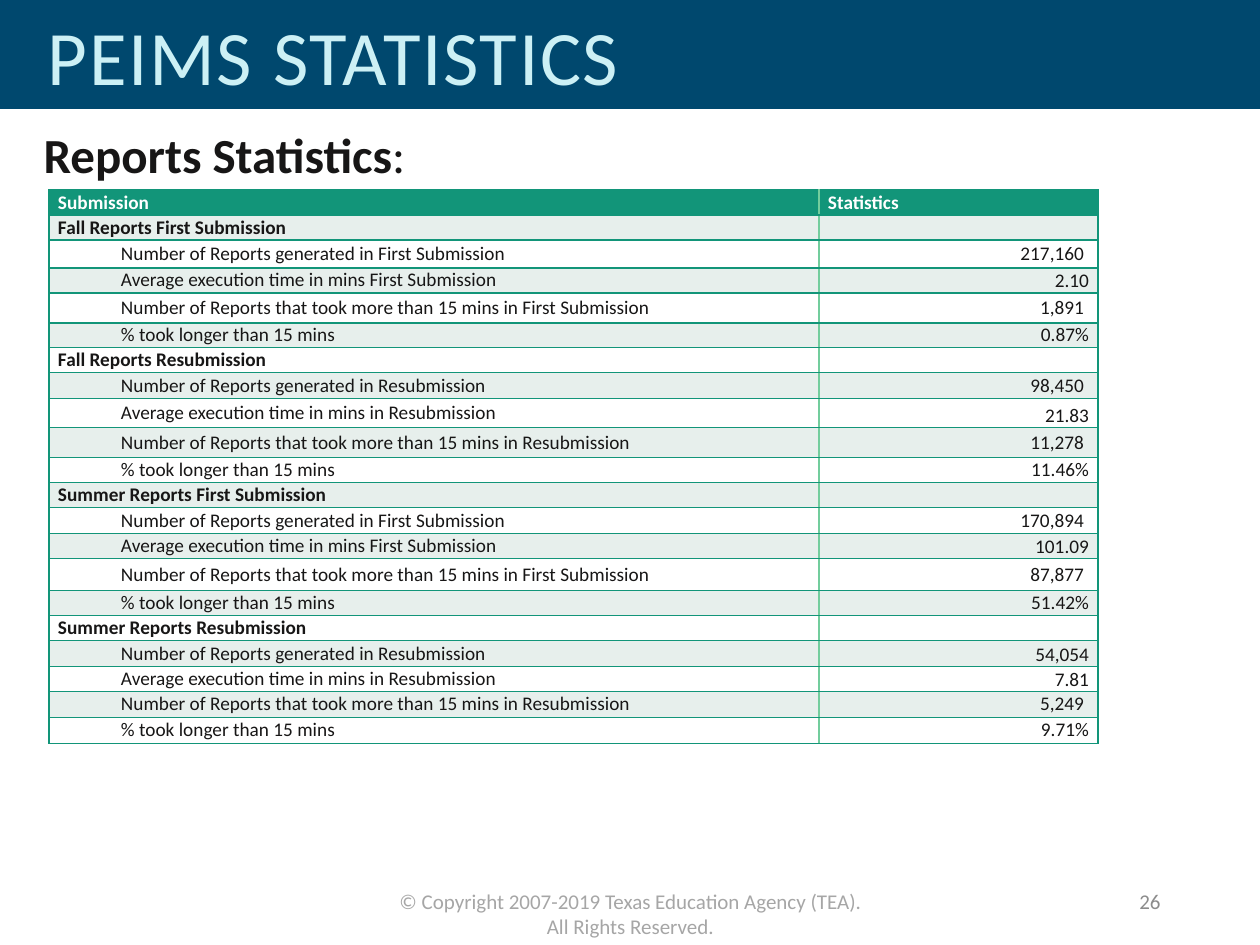
from lxml.etree import SubElement
from pptx import Presentation
from pptx.dml.color import RGBColor
from pptx.enum.shapes import MSO_SHAPE
from pptx.enum.text import MSO_ANCHOR, MSO_AUTO_SIZE, PP_ALIGN
from pptx.oxml import parse_xml
from pptx.oxml.ns import nsdecls, qn
from pptx.util import Emu, Pt

DPI = 126
INK, GREEN, MINT = "171616", "129579", "73CD9D"
BANDS = ["FFFFFF", "E7EFEC"]
COLUMNS = [770, 279]

GROUPS = [
    ("Fall Reports", "First Submission", 25, [
        ("217,160", 28, True), ("2.10", 25, False),
        ("1,891", 30, True), ("0.87%", 25, False)]),
    ("Fall Reports", "Resubmission", 25, [
        ("98,450", 26, True), ("21.83", 29, False),
        ("11,278", 30, True), ("11.46%", 25, False)]),
    ("Summer Reports", "First Submission", 25, [
        ("170,894", 26, True), ("101.09", 25, False),
        ("87,877", 32, True), ("51.42%", 25, False)]),
    ("Summer Reports", "Resubmission", 25, [
        ("54,054", 26, False), ("7.81", 25, False),
        ("5,249", 26, True), ("9.71%", 26, False)]),
]


def px(n):
    return Emu(round(n * 914400 / DPI))


def rgb(value):
    return RGBColor.from_string(value)


def place(sp, box):
    sp.left, sp.top, sp.width, sp.height = map(px, box)


def add_text(p, text, size=11, color=INK, bold=False, align=PP_ALIGN.LEFT, spacing=None):
    p.alignment = align
    r = p.add_run()
    r.text = text
    r.font.name = "Calibri"
    r.font.size = Pt(size)
    r.font.bold = bold
    r.font.color.rgb = rgb(color)
    if spacing:
        r._r.get_or_add_rPr().set("spc", str(spacing))


def add_banner(s, box):
    sp = s.shapes.add_shape(MSO_SHAPE.RECTANGLE, *map(px, box))
    sp.shadow.inherit = False
    sp.fill.solid()
    sp.fill.fore_color.rgb = rgb("00486E")
    sp.line.fill.background()
    s.shapes._spTree.insert(2, sp._element)


def add_title(s, box):
    sp = s.shapes.title
    place(sp, box)
    tf = sp.text_frame
    tf.auto_size = MSO_AUTO_SIZE.NONE
    tf.vertical_anchor = MSO_ANCHOR.MIDDLE
    p = tf.paragraphs[0]
    p.line_spacing = 0.9
    add_text(p, "PEIMS STATISTICS", size=44, color="CCF0F5", spacing=100)


def add_body(s, box):
    sp = s.placeholders[1]
    place(sp, box)
    tf = sp.text_frame
    tf.auto_size = MSO_AUTO_SIZE.NONE
    p = tf.paragraphs[0]
    p.line_spacing = 0.9
    p.space_before = Pt(0)
    pPr = p._p.get_or_add_pPr()
    pPr.set("marL", "0")
    pPr.set("indent", "0")
    SubElement(pPr, qn("a:buNone"))
    add_text(p, "Reports Statistics", size=28, bold=True)
    add_text(p, ":", size=28)


def add_note(s, box, text, anchor=MSO_ANCHOR.TOP, **fmt):
    tf = s.shapes.add_textbox(*map(px, box)).text_frame
    tf.word_wrap = True
    tf.vertical_anchor = anchor
    add_text(tf.paragraphs[0], text, size=12, **fmt)


def add_borders(cell, **colors):
    tcPr = cell._tc.get_or_add_tcPr()
    for i, side in enumerate("LRTB"):
        tcPr.insert(i, parse_xml(
            f'<a:ln{side} {nsdecls("a")} w="12700"><a:solidFill>'
            f'<a:srgbClr val="{colors.get(side, GREEN)}"/></a:solidFill></a:ln{side}>'))


def fill_cell(cell, text, fill, anchor=MSO_ANCHOR.MIDDLE, indent=0, right=9, **fmt):
    cell.margin_left, cell.margin_right = px(9), px(right)
    cell.margin_top = cell.margin_bottom = 0
    cell.vertical_anchor = anchor
    cell.fill.solid()
    cell.fill.fore_color.rgb = rgb(fill)
    p = cell.text_frame.paragraphs[0]
    if indent:
        p.level = 1
        p._p.get_or_add_pPr().set("marL", str(px(indent)))
    if text:
        add_text(p, text, **fmt)
    else:
        SubElement(p._p, qn("a:endParaRPr"), sz="1100")


def table_rows():
    header = dict(color="FFFFFF", bold=True)
    yield 25, ("Submission", header), ("Statistics", header)
    for season, period, height, stats in GROUPS:
        yield height, (f"{season} {period}", dict(bold=True)), ("", {})
        joint = "" if period == "First Submission" else "in "
        labels = [
            f"Number of Reports generated in {period}",
            f"Average execution time in mins {joint}{period}",
            f"Number of Reports that took more than 15 mins in {period}",
            "% took longer than 15 mins",
        ]
        for label, (value, row_height, inset) in zip(labels, stats):
            low = label.startswith("Average") or value == "54,054"
            yield row_height, (label, dict(indent=63)), (value, dict(
                align=PP_ALIGN.RIGHT, right=14 if inset else 9,
                anchor=MSO_ANCHOR.BOTTOM if low else MSO_ANCHOR.MIDDLE))


def add_statistics(s, left, top):
    rows = list(table_rows())
    box = left, top, sum(COLUMNS), sum(row[0] for row in rows)
    table = s.shapes.add_table(len(rows), len(COLUMNS), *map(px, box)).table
    for column, width in zip(table.columns, COLUMNS):
        column.width = px(width)
    for i, (height, name, value) in enumerate(rows):
        table.rows[i].height = px(height)
        fill = BANDS[i % 2] if i else GREEN
        for j, (text, fmt) in enumerate((name, value)):
            cell = table.cell(i, j)
            fill_cell(cell, text, fill, **fmt)
            add_borders(cell, **{"RL"[j]: MINT})


def main():
    prs = Presentation()
    prs.slide_width, prs.slide_height = px(1260), px(945)
    s = prs.slides.add_slide(prs.slide_layouts[1])
    add_banner(s, (0, 0, 1260, 109))
    add_title(s, (35, 6, 1060, 109))
    add_body(s, (31, 125, 1173, 726))
    add_note(s, (383, 882, 495, 38),
             "© Copyright 2007-2019 Texas Education Agency (TEA). All Rights Reserved.",
             color="A6A6A6", align=PP_ALIGN.CENTER)
    add_note(s, (890, 876, 283, 50), "26", anchor=MSO_ANCHOR.MIDDLE,
             color="8C8C8C", align=PP_ALIGN.RIGHT)
    add_statistics(s, 49, 190)
    prs.save("out.pptx")


if __name__ == "__main__":
    main()
